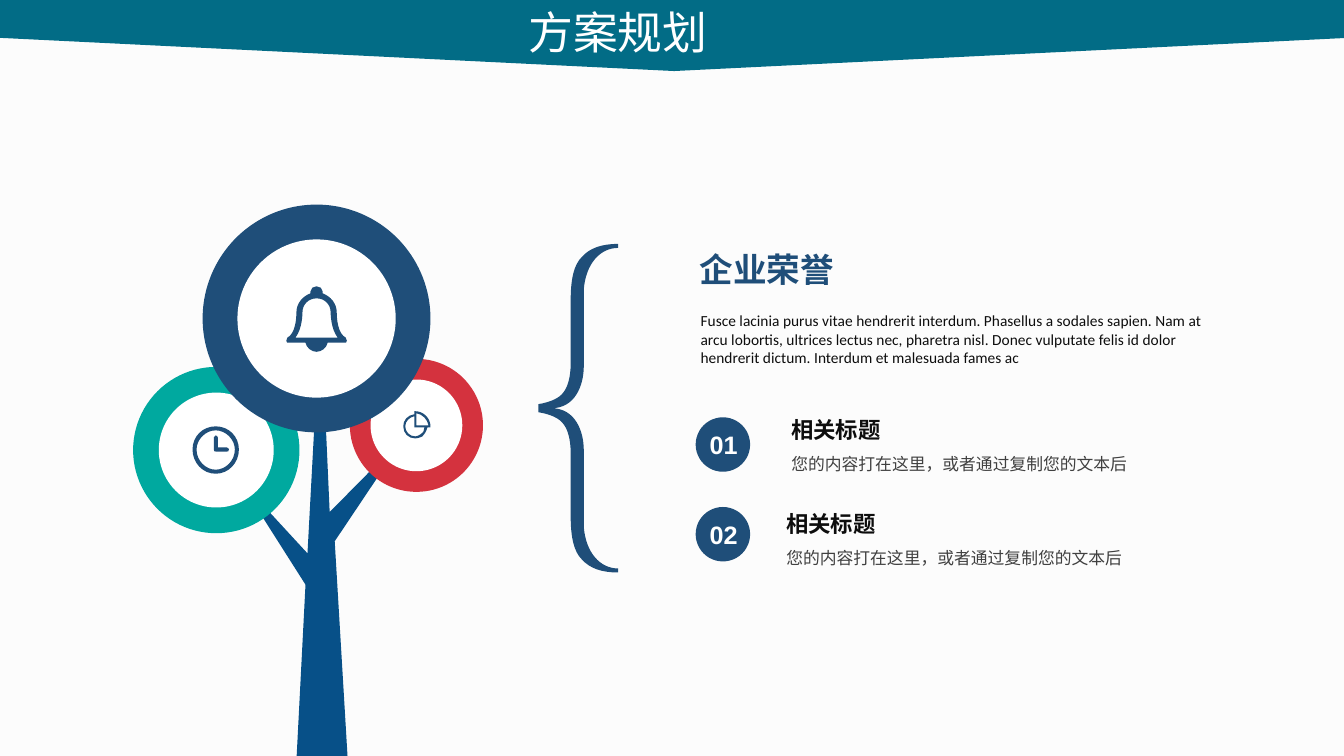
from pptx import Presentation
from pptx.dml.color import RGBColor
from pptx.enum.shapes import MSO_SHAPE as Preset
from pptx.enum.text import PP_ALIGN as Align
from pptx.oxml.xmlchemy import OxmlElement
from pptx.util import Inches, Pt

# The grid has 13.33 columns and 7.5 rows of square cells
COLUMNS, ROWS = 13.33, 7.5
CELL = Inches(1)

PAPER = RGBColor(0xFC, 0xFC, 0xFC)
WHITE = RGBColor(0xFF, 0xFF, 0xFF)
BANNER = RGBColor(0x02, 0x6C, 0x86)
NAVY = RGBColor(0x1F, 0x4E, 0x79)
TRUNK = RGBColor(0x07, 0x50, 0x88)
RED = RGBColor(0xD4, 0x32, 0x3E)
TEAL = RGBColor(0x00, 0xA9, 0x9F)
INK = RGBColor(0x0D, 0x0D, 0x0D)
GREY = RGBColor(0x40, 0x40, 0x40)

CJK = "Noto Sans CJK SC"
LATIN = "Calibri"

# Outlines: two numbers are a corner, six are a cubic curve
BRACE_HALF = [
    (5.47, 4.05), (5.7, 4.05, 5.79, 3.83, 5.79, 3.63), (5.79, 2.87),
    (5.81, 2.62, 5.95, 2.46, 6.13, 2.46), (6.13, 2.42),
    (5.97, 2.42, 5.85, 2.46, 5.77, 2.55), (5.69, 2.63, 5.66, 2.77, 5.66, 2.99),
    (5.66, 3.61), (5.66, 3.74, 5.63, 3.84, 5.59, 3.89),
    (5.55, 3.95, 5.46, 3.99, 5.34, 4.01),
]
BELL_HALF = [
    (3.14, 2.84), (3.11, 2.84, 3.08, 2.86, 3.08, 2.89), (3.08, 2.91),
    (3, 2.94, 2.94, 3.01, 2.94, 3.1), (2.94, 3.16, 2.93, 3.31, 2.85, 3.35),
    (2.84, 3.36, 2.84, 3.37, 2.84, 3.38), (2.84, 3.4, 2.85, 3.4, 2.86, 3.4),
    (3.03, 3.4), (3.04, 3.45, 3.09, 3.49, 3.14, 3.49),
]
BELL_HOLLOW_HALF = [
    (3.14, 2.96), (3.06, 2.96, 3, 3.02, 3, 3.1),
    (3, 3.11, 3, 3.26, 2.93, 3.35), (3.14, 3.35),
]
PIE = [
    (4.27, 4.23), (4.27, 4.15, 4.2, 4.08, 4.12, 4.08), (4.11, 4.08), (4.11, 4.11),
    (4.04, 4.12, 4, 4.17, 4, 4.23), (4, 4.3, 4.05, 4.35, 4.12, 4.35),
    (4.14, 4.35, 4.17, 4.34, 4.19, 4.33), (4.21, 4.31, 4.23, 4.28, 4.24, 4.24),
    (4.27, 4.24),
]
PIE_BODY = [
    (4.17, 4.31), (4.15, 4.32, 4.14, 4.33, 4.12, 4.33),
    (4.06, 4.33, 4.02, 4.28, 4.02, 4.23), (4.02, 4.18, 4.06, 4.14, 4.11, 4.13),
    (4.11, 4.24), (4.21, 4.24), (4.21, 4.27, 4.2, 4.29, 4.17, 4.31),
]
PIE_SLICE = [(4.13, 4.22), (4.13, 4.1), (4.19, 4.11, 4.24, 4.16, 4.25, 4.22)]
CLOCK_HALF = [
    (2.14, 4.7), (2.01, 4.7, 1.91, 4.59, 1.91, 4.46),
    (1.91, 4.33, 2.01, 4.23, 2.14, 4.23),
]
CLOCK_FACE_HALF = [
    (2.14, 4.27), (2.04, 4.27, 1.95, 4.36, 1.95, 4.46),
    (1.95, 4.57, 2.04, 4.66, 2.14, 4.66),
]
CLOCK_HANDS = [
    (2.25, 4.48), (2.14, 4.48), (2.13, 4.48, 2.12, 4.48, 2.12, 4.46), (2.12, 4.34),
    (2.12, 4.33, 2.13, 4.32, 2.14, 4.32), (2.15, 4.32, 2.16, 4.33, 2.16, 4.34),
    (2.16, 4.44), (2.25, 4.44), (2.26, 4.44, 2.27, 4.45, 2.27, 4.46),
    (2.27, 4.48, 2.26, 4.48, 2.25, 4.48),
]
TREE = [
    (2.94, 7.55), (3.45, 7.55), (3.32, 5.37), (4.03, 4.31), (3.27, 5.08),
    (3.18, 3.07), (3.05, 5.49), (2.35, 4.73), (3.03, 5.8),
]


def cells(*values):
    return [round(value * CELL) for value in values]


def mirror(half, axis, centre):
    """Complete a half outline with its reflection, walked backwards."""
    def reflect(point):
        flipped = list(point)
        flipped[axis] = round(2 * centre - point[axis], 2)
        return tuple(flipped)

    whole = list(half)
    turn = reflect(half[-1][-2:])
    if turn != half[-1][-2:]:
        whole.append(turn)
    for before, segment in reversed(list(zip(half, half[1:]))):
        controls = [segment[2:4], segment[:2]] if len(segment) == 6 else []
        points = [reflect(point) for point in controls + [before[-2:]]]
        whole.append(sum(points, ()))
    return whole


def paint(shape, colour):
    shape.fill.solid()
    shape.fill.fore_color.rgb = colour
    shape.line.fill.background()
    shape.shadow.inherit = False
    return shape


def add_outline(slide, colour, *contours):
    builder = None
    for contour in contours:
        first, *rest = [cells(*segment[-2:]) for segment in contour]
        if builder is None:
            builder = slide.shapes.build_freeform(*first)
        else:
            builder.move_to(*first)
        builder.add_line_segments(rest, close=True)
    shape = paint(builder.convert_to_shape(), colour)

    # Bend the straight segments that are curves
    segments = [segment for contour in contours for segment in contour[1:]]
    sides = shape._element.xpath(".//a:lnTo")
    for side, segment in zip(sides, segments):
        if len(segment) == 6:
            curve = OxmlElement("a:cubicBezTo")
            for x, y in zip(cells(*segment[::2]), cells(*segment[1::2])):
                point = OxmlElement("a:pt")
                point.set("x", str(x - shape.left))
                point.set("y", str(y - shape.top))
                curve.append(point)
            side.getparent().replace(side, curve)


def add_preset(slide, preset, box, colour):
    return paint(slide.shapes.add_shape(preset, *cells(*box)), colour)


def add_ring(slide, left, top, outer, inner, colour):
    rim = (outer - inner) / 2
    add_preset(slide, Preset.OVAL, (left, top, outer, outer), colour)
    add_preset(slide, Preset.OVAL, (left + rim, top + rim, inner, inner), WHITE)


def add_text(slide, box, text, size, colour, align=Align.LEFT, spacing=None,
             inset=0.1, wrap=True, font=CJK, bold=False):
    frame = slide.shapes.add_textbox(*cells(*box)).text_frame
    frame.word_wrap = wrap
    frame.margin_left, frame.margin_right = cells(inset, inset)
    paragraph = frame.paragraphs[0]
    paragraph.alignment = align
    paragraph.line_spacing = spacing
    run = paragraph.add_run()
    run.text = text
    run.font.size = Pt(size)
    run.font.bold = bold
    run.font.color.rgb = colour
    run.font.name = font
    east_asian = OxmlElement("a:ea")
    east_asian.set("typeface", CJK)
    run.font._element.append(east_asian)


def add_badge(slide, top, number):
    add_preset(slide, Preset.OVAL, (6.9, top, 0.54, 0.54), NAVY)
    add_text(slide, (6.94, top + 0.07, 0.48, 0.4), number, 18, WHITE,
             wrap=False, font="Arial", bold=True)


def add_item(slide, left, top, title, detail):
    add_text(slide, (left, top + 0.4, 4.05, 0.4), detail, 12, GREY,
             spacing=1.5, font=LATIN)
    add_text(slide, (left, top, 1.1, 0.46), title, 16, INK,
             spacing=1.5, wrap=False, bold=True)


def main():
    presentation = Presentation()
    presentation.slide_width, presentation.slide_height = cells(COLUMNS, ROWS)
    slide = presentation.slides.add_slide(presentation.slide_layouts[6])

    # Backdrop, and banner pointing down with the title
    add_preset(slide, Preset.RECTANGLE, (0, 0, COLUMNS, ROWS), PAPER)
    banner = add_preset(slide, Preset.PENTAGON, (6.33, -6.34, 0.71, 13.38), BANNER)
    banner.rotation = 90
    banner.adjustments[0] = 0.464
    add_text(slide, (5.14, 0, 3.05, 0.64), "方案规划", 32, WHITE, align=Align.JUSTIFY)

    # Brace, numbered badges and introduction
    add_outline(slide, NAVY, mirror(BRACE_HALF, 1, 4.05))
    add_badge(slide, 4.14, "01")
    add_badge(slide, 5.03, "02")
    add_text(slide, (6.85, 3.04, 5.28, 0.66),
             "Fusce lacinia purus vitae hendrerit interdum. Phasellus a sodales sapien. "
             "Nam at arcu lobortis, ultrices lectus nec, pharetra nisl. Donec vulputate "
             "felis id dolor hendrerit dictum. Interdum et malesuada fames ac",
             11, INK, font=LATIN)
    add_text(slide, (6.94, 2.42, 2.03, 0.5), "企业荣誉", 24, NAVY,
             align=Align.JUSTIFY, inset=0, bold=True)

    # Numbered items
    for left, top in [(7.75, 3.95), (7.7, 4.88)]:
        add_item(slide, left, top, "相关标题", "您的内容打在这里，或者通过复制您的文本后")

    # Tree with three ring crowns
    add_outline(slide, TRUNK, TREE)
    add_ring(slide, 3.47, 3.56, 1.32, 0.91, RED)
    add_ring(slide, 1.32, 3.64, 1.65, 1.14, TEAL)
    add_ring(slide, 2.01, 2.03, 2.26, 1.57, NAVY)

    # Icons: pie, bell and clock
    add_outline(slide, NAVY, PIE, PIE_BODY, PIE_SLICE)
    add_outline(slide, NAVY, mirror(BELL_HALF, 0, 3.14), mirror(BELL_HOLLOW_HALF, 0, 3.14))
    add_outline(slide, NAVY, mirror(CLOCK_HALF, 0, 2.14), mirror(CLOCK_FACE_HALF, 0, 2.14))
    add_outline(slide, NAVY, CLOCK_HANDS)

    presentation.save("out.pptx")


if __name__ == "__main__":
    main()
